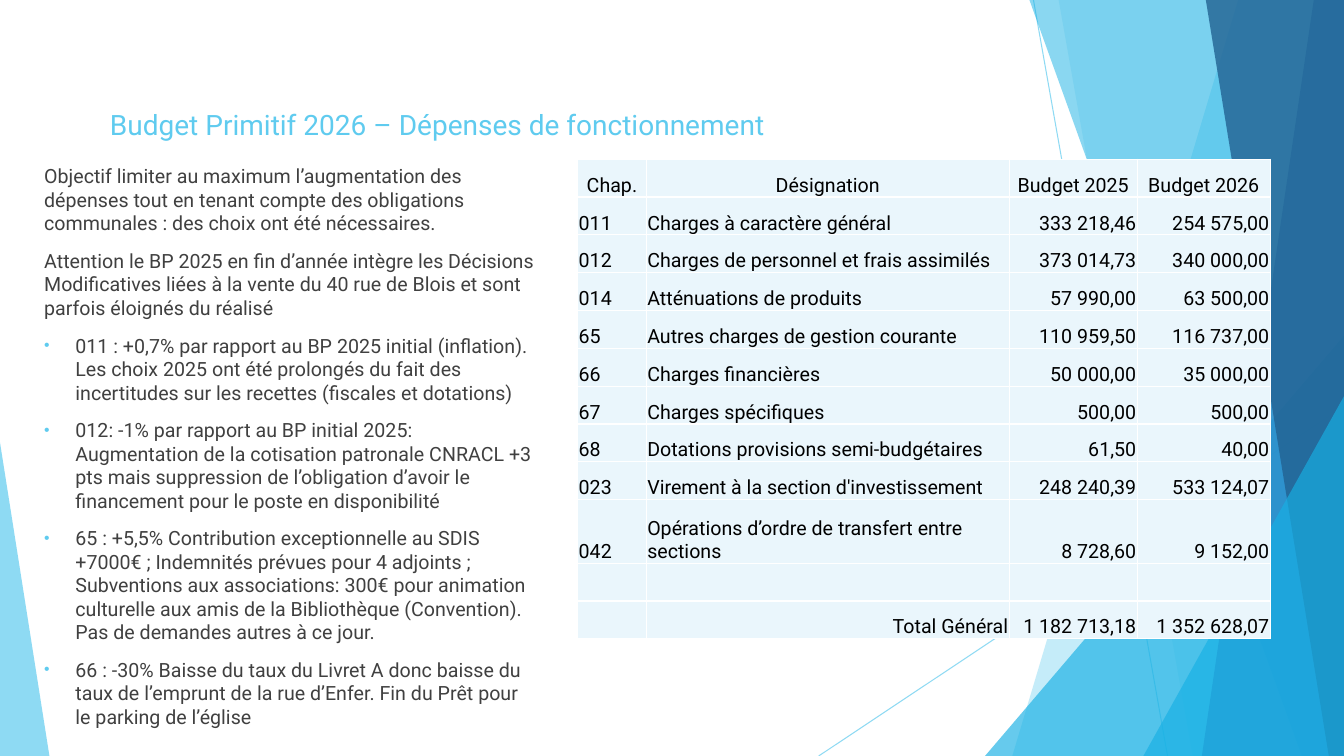
from lxml import etree
from pptx import Presentation
from pptx.dml.color import RGBColor
from pptx.enum.shapes import MSO_CONNECTOR, MSO_SHAPE
from pptx.enum.text import MSO_ANCHOR, PP_ALIGN
from pptx.oxml.ns import qn
from pptx.util import Inches, Pt

STRAIGHT = MSO_CONNECTOR.STRAIGHT
TRIANGLE = MSO_SHAPE.ISOSCELES_TRIANGLE
BOTTOM, TOP = MSO_ANCHOR.BOTTOM, MSO_ANCHOR.TOP
LEFT, CENTER, RIGHT = PP_ALIGN.LEFT, PP_ALIGN.CENTER, PP_ALIGN.RIGHT

FONT = "Roboto"
COLORS = {
    "sky": "5FCBEF", "cyan": "17B0E4", "blue": "2E83C3", "navy": "226292",
    "cell": "EAF6FC", "border": "FFFFFF", "ink": "000000", "body": "404040",
}
WIDTH, HEIGHT = 13.33, 7.5

# Start, end
RAYS = [((10.25, 0), (11.58, HEIGHT)), ((WIDTH, 4.03), (8.12, HEIGHT))]
# Top left x, bottom left x, colour, opacity; each band runs to the right edge
BACK_BANDS = [(12.28, 10.04, "sky", 36), (10.5, 11.83, "sky", 20)]
FRONT_BANDS = [(10.21, 12.91, "cyan", 50), (13.03, 11.92, "blue", 70),
               (11.96, 13.18, "navy", 80)]

COLUMN_WIDTHS = [0.68, 3.6, 1.27, 1.32]
TABLE_HEIGHT, TALL_ROW_HEIGHT = 4.76, 0.63
TALL_ROW = 9
BUDGET = [
    ("Chap.", "Désignation", "Budget 2025", "Budget 2026"),
    ("011", "Charges à caractère général", "333 218,46", "254 575,00"),
    ("012", "Charges de personnel et frais assimilés", "373 014,73", "340 000,00"),
    ("014", "Atténuations de produits", "57 990,00", "63 500,00"),
    ("65", "Autres charges de gestion courante", "110 959,50", "116 737,00"),
    ("66", "Charges financières", "50 000,00", "35 000,00"),
    ("67", "Charges spécifiques", "500,00", "500,00"),
    ("68", "Dotations provisions semi-budgétaires", "61,50", "40,00"),
    ("023", "Virement à la section d'investissement", "248 240,39", "533 124,07"),
    ("042", "Opérations d’ordre de transfert entre sections", "8 728,60", "9 152,00"),
    ("", "", "", ""),
    ("", "Total Général", "1 182 713,18", "1 352 628,07"),
]

INTRO = [
    "Objectif limiter au maximum l’augmentation des dépenses tout en tenant compte "
    "des obligations communales : des choix ont été nécessaires.",
    "Attention le BP 2025 en fin d’année intègre les Décisions Modificatives liées "
    "à la vente du 40 rue de Blois et sont parfois éloignés du réalisé",
]
REMARKS = [
    "011 : +0,7% par rapport au BP 2025 initial (inflation). Les choix 2025 ont été "
    "prolongés du fait des incertitudes sur les recettes (fiscales et dotations)",
    "012: -1% par rapport au BP initial 2025: Augmentation de la cotisation patronale "
    "CNRACL +3 pts mais suppression de l’obligation d’avoir le financement pour le "
    "poste en disponibilité",
    "65 : +5,5% Contribution exceptionnelle au SDIS +7000€ ; Indemnités prévues pour "
    "4 adjoints ; Subventions aux associations: 300€ pour animation culturelle aux "
    "amis de la Bibliothèque (Convention). Pas de demandes autres à ce jour.",
    "66 : -30% Baisse du taux du Livret A donc baisse du taux de l’emprunt de la rue "
    "d’Enfer. Fin du Prêt pour le parking de l’église",
]


def rgb(name):
    return RGBColor.from_string(COLORS[name])


def style_text(para, size, color):
    for span in para.runs:
        span.font.name = FONT
        span.font.size = Pt(size)
        span.font.bold = False
        span.font.color.rgb = rgb(color)


def set_opacity(element, percent):
    """Make the first solid colour inside the element partly transparent."""
    color = next(element.iter(qn("a:srgbClr")))
    etree.SubElement(color, qn("a:alpha"), val=str(percent * 1000))


def paint(shape, color, opacity):
    shape.shadow.inherit = False
    shape.fill.solid()
    shape.fill.fore_color.rgb = rgb(color)
    shape.line.fill.background()
    set_opacity(shape.fill._xPr, opacity)


def add_ray(page, start, end):
    x1, y1, x2, y2 = map(Inches, start + end)
    ray = page.shapes.add_connector(STRAIGHT, x1, y1, x2, y2)
    ray.line.color.rgb = rgb("sky")
    ray.line.width = Pt(0.75)
    properties = ray._element.spPr
    set_opacity(properties, 70)
    etree.SubElement(properties, qn("a:effectLst"))


def add_band(page, top_x, bottom_x, color, opacity):
    outline = page.shapes.build_freeform(Inches(top_x), 0)
    corners = [(WIDTH, 0), (WIDTH, HEIGHT), (bottom_x, HEIGHT)]
    outline.add_line_segments([(Inches(x), Inches(y)) for x, y in corners])
    paint(outline.convert_to_shape(), color, opacity)


def add_triangle(page, left, top, width, apex, color, opacity):
    """Triangle standing on the bottom edge of the page."""
    box = map(Inches, (left, top, width, HEIGHT - top))
    triangle = page.shapes.add_shape(TRIANGLE, *box)
    triangle.adjustments[0] = apex
    paint(triangle, color, opacity)


def add_decoration(page):
    for start, end in RAYS:
        add_ray(page, start, end)
    for band in BACK_BANDS:
        add_band(page, *band)
    add_triangle(page, 9.77, 3.33, 3.56, 1, "cyan", 66)
    for band in FRONT_BANDS:
        add_band(page, *band)
    add_triangle(page, 11.34, 3.93, 1.99, 1, "cyan", 66)
    add_triangle(page, 0, 4.39, 0.49, 0, "sky", 70)


def set_title(page, text):
    title = page.shapes.title
    title.left, title.top = Inches(0.99), Inches(0.49)
    title.width, title.height = Inches(9.32), Inches(0.96)
    frame = title.text_frame
    frame.text = text
    frame.vertical_anchor = BOTTOM
    frame.paragraphs[0].alignment = LEFT
    style_text(frame.paragraphs[0], 20, "sky")


def add_borders(cell):
    properties = cell._tc.get_or_add_tcPr()
    for index, side in enumerate(("lnL", "lnR", "lnT", "lnB")):
        line = etree.Element(qn(f"a:{side}"), w=str(Pt(1)))
        fill = etree.SubElement(line, qn("a:solidFill"))
        etree.SubElement(fill, qn("a:srgbClr"), val=COLORS["border"])
        properties.insert(index, line)


def fill_cell(cell, text, alignment):
    cell.fill.solid()
    cell.fill.fore_color.rgb = rgb("cell")
    add_borders(cell)
    cell.margin_left = cell.margin_right = cell.margin_top = Inches(0.01)
    cell.margin_bottom = 0
    cell.vertical_anchor = BOTTOM
    cell.text = text
    para = cell.text_frame.paragraphs[0]
    para.alignment = alignment
    style_text(para, 14, "ink")


def add_budget_table(page):
    row_count = len(BUDGET)
    frame = page.shapes.add_table(
        row_count, len(COLUMN_WIDTHS), Inches(5.73), Inches(1.58),
        Inches(sum(COLUMN_WIDTHS)), Inches(TABLE_HEIGHT))
    table = frame.table
    table.first_row = table.horz_banding = False
    for column, width in zip(table.columns, COLUMN_WIDTHS):
        column.width = Inches(width)
    row_height = (TABLE_HEIGHT - TALL_ROW_HEIGHT) / (row_count - 1)
    for r, values in enumerate(BUDGET):
        table.rows[r].height = Inches(TALL_ROW_HEIGHT if r == TALL_ROW else row_height)
        for c, text in enumerate(values):
            if r == 0:
                alignment = CENTER
            else:
                alignment = RIGHT if c > 1 or r == row_count - 1 else LEFT
            fill_cell(table.cell(r, c), text, alignment)


def add_bullet(para):
    properties = para._p.get_or_add_pPr()
    properties.set("marL", str(Inches(0.31)))
    properties.set("indent", str(-Inches(0.31)))
    color = etree.SubElement(properties, qn("a:buClr"))
    etree.SubElement(color, qn("a:srgbClr"), val=COLORS["sky"])
    etree.SubElement(properties, qn("a:buSzPct"), val="80000")
    etree.SubElement(properties, qn("a:buFont"), typeface="Arial")
    etree.SubElement(properties, qn("a:buChar"), char="•")


def add_comments(page):
    box = page.shapes.add_textbox(Inches(0.34), Inches(1.58), Inches(5.1), Inches(5.72))
    frame = box.text_frame
    frame.word_wrap = True
    frame.vertical_anchor = TOP
    for index, text in enumerate(INTRO + REMARKS):
        para = frame.add_paragraph() if index else frame.paragraphs[0]
        para.text = text
        if index:
            para.space_before = Pt(10)
        if index >= len(INTRO):
            add_bullet(para)
        style_text(para, 14, "body")


def main():
    deck = Presentation()
    deck.slide_width, deck.slide_height = Inches(WIDTH), Inches(HEIGHT)
    page = deck.slides.add_slide(deck.slide_layouts[5])
    add_decoration(page)
    set_title(page, "Budget Primitif 2026 – Dépenses de fonctionnement")
    add_budget_table(page)
    add_comments(page)
    deck.save("out.pptx")


if __name__ == "__main__":
    main()
